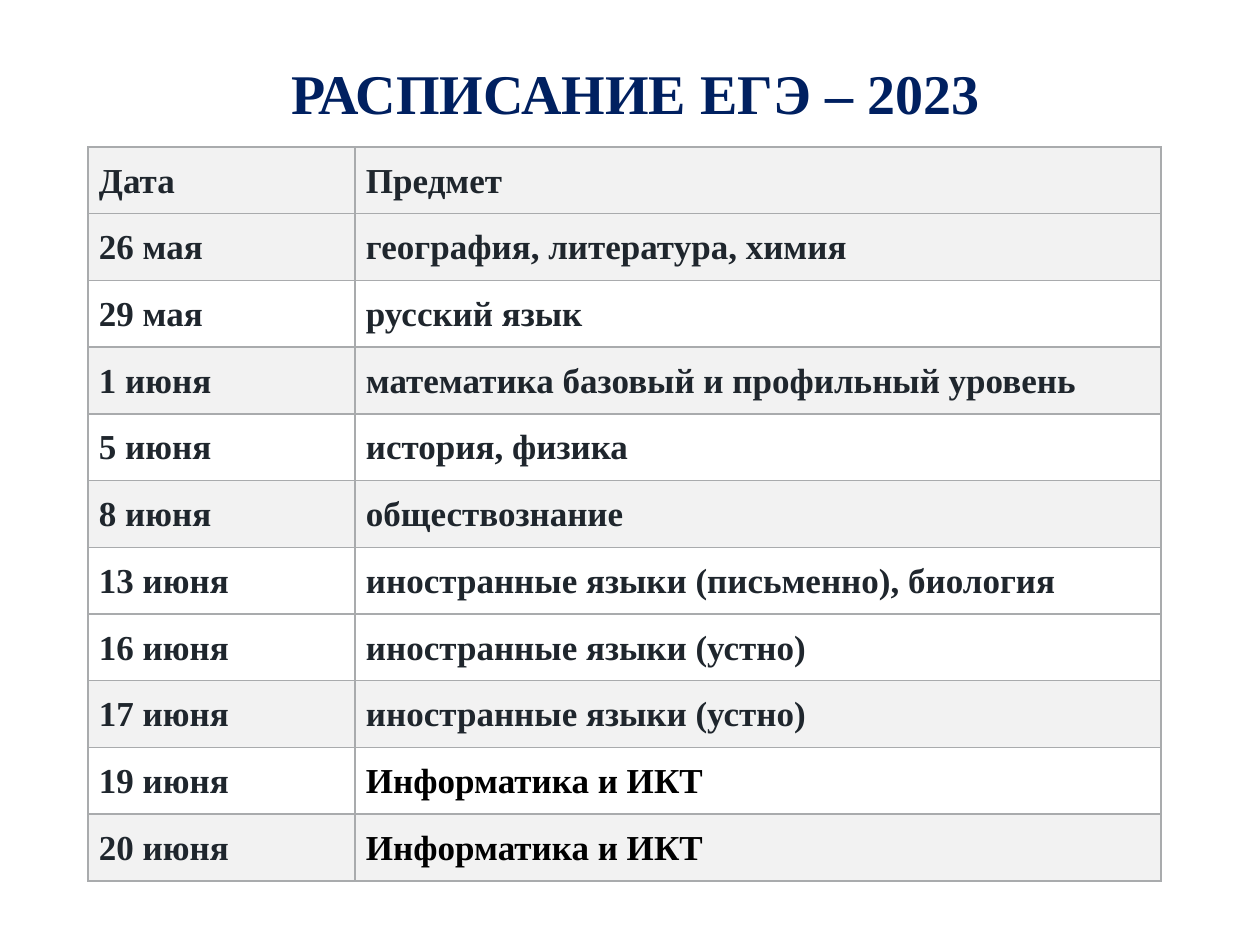
from lxml import etree
from pptx import Presentation
from pptx.dml.color import RGBColor
from pptx.enum.text import MSO_ANCHOR, PP_ALIGN
from pptx.oxml.ns import qn
from pptx.util import Emu, Pt

CENTER = PP_ALIGN.CENTER
LEFT = PP_ALIGN.LEFT
TOP = MSO_ANCHOR.TOP
EMU_PER_PX = 914400 / 126
FONT = "Times New Roman"
COLORS = {
    "title": "002060",
    "text": "1F262D",
    "black": "000000",
    "band": "F2F2F2",
    "white": "FFFFFF",
    "border": "A9ABAD",
}

# Date, subject, row fill, subject colour
SCHEDULE = [
    ("Дата", "Предмет", "band", "text"),
    ("26 мая", "география, литература, химия", "band", "text"),
    ("29 мая", "русский язык", "white", "text"),
    ("1 июня", "математика базовый и профильный уровень", "band", "text"),
    ("5 июня", "история, физика", "white", "text"),
    ("8 июня", "обществознание", "band", "text"),
    ("13 июня", "иностранные языки (письменно), биология", "white", "text"),
    ("16 июня", "иностранные языки (устно)", "white", "text"),
    ("17 июня", "иностранные языки (устно)", "band", "text"),
    ("19 июня", "Информатика и ИКТ", "white", "black"),
    ("20 июня", "Информатика и ИКТ", "band", "black"),
]


def px(length):
    return Emu(round(length * EMU_PER_PX))


def write_text(text_frame, text, size, color, alignment):
    text_frame.text = text
    paragraph = text_frame.paragraphs[0]
    paragraph.alignment = alignment
    font = paragraph.runs[0].font
    font.name = FONT
    font.size = Pt(size)
    font.bold = True
    font.color.rgb = RGBColor.from_string(COLORS[color])
    return paragraph


def add_title(slide, text):
    shape = slide.shapes.add_textbox(px(39), px(49), px(1182), px(149))
    text_frame = shape.text_frame
    text_frame.word_wrap = True
    text_frame.vertical_anchor = TOP
    text_frame.margin_left, text_frame.margin_right = px(24), px(13)
    text_frame.margin_top = px(10)
    write_text(text_frame, text, 32, "title", CENTER)


def set_borders(cell):
    """Put the same thin line on all four sides; lines must precede the fill."""
    properties = cell._tc.get_or_add_tcPr()
    for index, side in enumerate(("a:lnL", "a:lnR", "a:lnT", "a:lnB")):
        line = etree.Element(qn(side), w=str(Pt(1)))
        fill = etree.SubElement(line, qn("a:solidFill"))
        etree.SubElement(fill, qn("a:srgbClr"), val=COLORS["border"])
        properties.insert(index, line)


def format_cell(cell, text, fill, color):
    cell.margin_left = cell.margin_right = px(11)
    cell.margin_top = cell.margin_bottom = px(9)
    cell.vertical_anchor = TOP
    cell.fill.solid()
    cell.fill.fore_color.rgb = RGBColor.from_string(COLORS[fill])
    set_borders(cell)
    paragraph = write_text(cell.text_frame, text, 20, color, LEFT)
    paragraph.line_spacing = 1.15


def add_schedule(slide):
    widths = (267, 806)
    height = 734
    frame = slide.shapes.add_table(
        len(SCHEDULE), len(widths), px(88), px(147), px(sum(widths)), px(height)
    )
    table = frame.table
    for column, width in zip(table.columns, widths):
        column.width = px(width)
    for row, (date, subject, fill, color) in zip(table.rows, SCHEDULE):
        row.height = px(height / len(SCHEDULE))
        date_cell, subject_cell = row.cells
        format_cell(date_cell, date, fill, "text")
        format_cell(subject_cell, subject, fill, color)


def main():
    presentation = Presentation()
    presentation.slide_width, presentation.slide_height = px(1260), px(945)
    slide = presentation.slides.add_slide(presentation.slide_layouts[6])
    add_title(slide, "РАСПИСАНИЕ ЕГЭ – 2023")
    add_schedule(slide)
    presentation.save("out.pptx")


if __name__ == "__main__":
    main()
